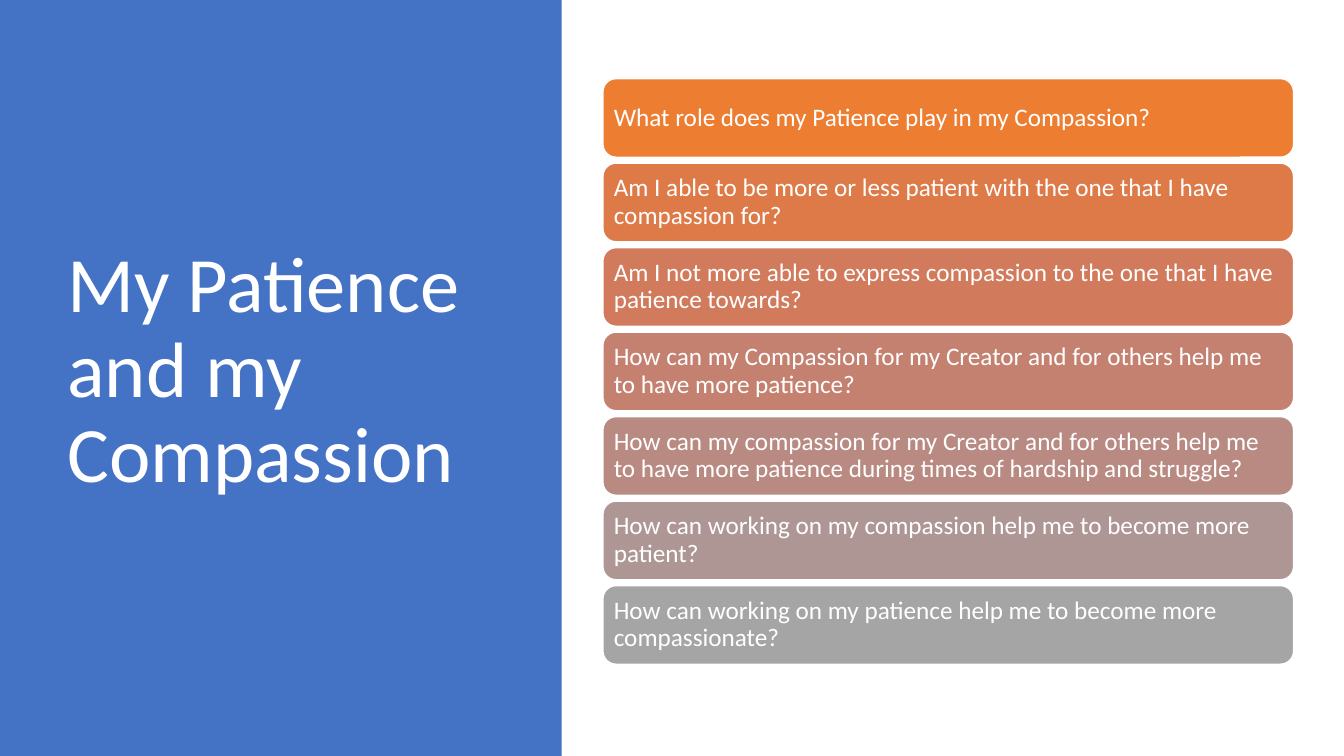
import dataclasses

import pptx
import pptx.dml.color
import pptx.enum.shapes
import pptx.enum.text
import pptx.shapes.autoshape
import pptx.slide
import pptx.text.text
import pptx.util

Inches = pptx.util.Inches
Shape = pptx.enum.shapes.MSO_SHAPE


@dataclasses.dataclass(frozen=True)
class Theme:
    font: str = "Calibri"
    white: str = "FFFFFF"
    panel: str = "4472C4"
    title_size: int = 56
    card_size: int = 18
    spacing: float = 0.9


@dataclasses.dataclass(frozen=True)
class Box:
    left: float
    top: float
    width: float
    height: float

    def lengths(self) -> tuple[int, ...]:
        return tuple(Inches(n) for n in dataclasses.astuple(self))


@dataclasses.dataclass(frozen=True)
class Card:
    text: str
    fill: str


THEME = Theme()
PANEL = Box(0, 0, 5.57, 7.5)
TITLE = Box(0.57, 0.68, 4.16, 6.02)
FIRST = Box(5.98, 0.78, 6.85, 0.78)
LAST_TOP = 5.81
INSET = 0.07

CARDS = [
    Card("What role does my Patience play in my Compassion?", "ED7D31"),
    Card("Am I able to be more or less patient with the one that I have "
         "compassion for?", "DE7A47"),
    Card("Am I not more able to express compassion to the one that I have "
         "patience towards?", "D17B5C"),
    Card("How can my Compassion for my Creator and for others help me "
         "to have more patience?", "C48170"),
    Card("How can my compassion for my Creator and for others help me "
         "to have more patience during times of hardship and struggle?", "B98A82"),
    Card("How can working on my compassion help me to become more patient?", "AE9694"),
    Card("How can working on my patience help me to become more "
         "compassionate?", "A5A5A5"),
]


def color(code: str) -> pptx.dml.color.RGBColor:
    return pptx.dml.color.RGBColor.from_string(code)


def add_block(slide: pptx.slide.Slide, kind: Shape, box: Box,
              fill: str) -> pptx.shapes.autoshape.Shape:
    """Draw a filled shape with neither shadow nor outline."""
    block = slide.shapes.add_shape(kind, *box.lengths())
    block.shadow.inherit = False
    block.fill.solid()
    block.fill.fore_color.rgb = color(fill)
    block.line.fill.background()
    return block


def write(frame: pptx.text.text.TextFrame, text: str, size: int) -> None:
    """Set white, left-aligned text in the middle of the frame's height."""
    frame.word_wrap = True
    frame.vertical_anchor = pptx.enum.text.MSO_ANCHOR.MIDDLE
    line = frame.paragraphs[0]
    line.alignment = pptx.enum.text.PP_ALIGN.LEFT
    line.line_spacing = THEME.spacing
    run = line.add_run()
    run.text = text
    run.font.name = THEME.font
    run.font.size = pptx.util.Pt(size)
    run.font.color.rgb = color(THEME.white)


def add_card(slide: pptx.slide.Slide, card: Card, box: Box) -> None:
    block = add_block(slide, Shape.ROUNDED_RECTANGLE, box, card.fill)
    block.line.color.rgb = color(THEME.white)
    block.line.width = pptx.util.Pt(1)
    frame = block.text_frame
    frame.margin_left = frame.margin_right = Inches(INSET)
    frame.margin_top = frame.margin_bottom = Inches(INSET)
    write(frame, card.text, THEME.card_size)


def main() -> None:
    deck = pptx.Presentation()
    deck.slide_width, deck.slide_height = Inches(13.33), Inches(7.5)
    slide = deck.slides.add_slide(deck.slide_layouts[6])

    add_block(slide, Shape.RECTANGLE, PANEL, THEME.panel)
    title = slide.shapes.add_textbox(*TITLE.lengths())
    write(title.text_frame, "My Patience and my Compassion", THEME.title_size)

    step = (LAST_TOP - FIRST.top) / (len(CARDS) - 1)
    for row, card in enumerate(CARDS):
        add_card(slide, card, dataclasses.replace(FIRST, top=FIRST.top + row * step))

    deck.save("out.pptx")


if __name__ == "__main__":
    main()
